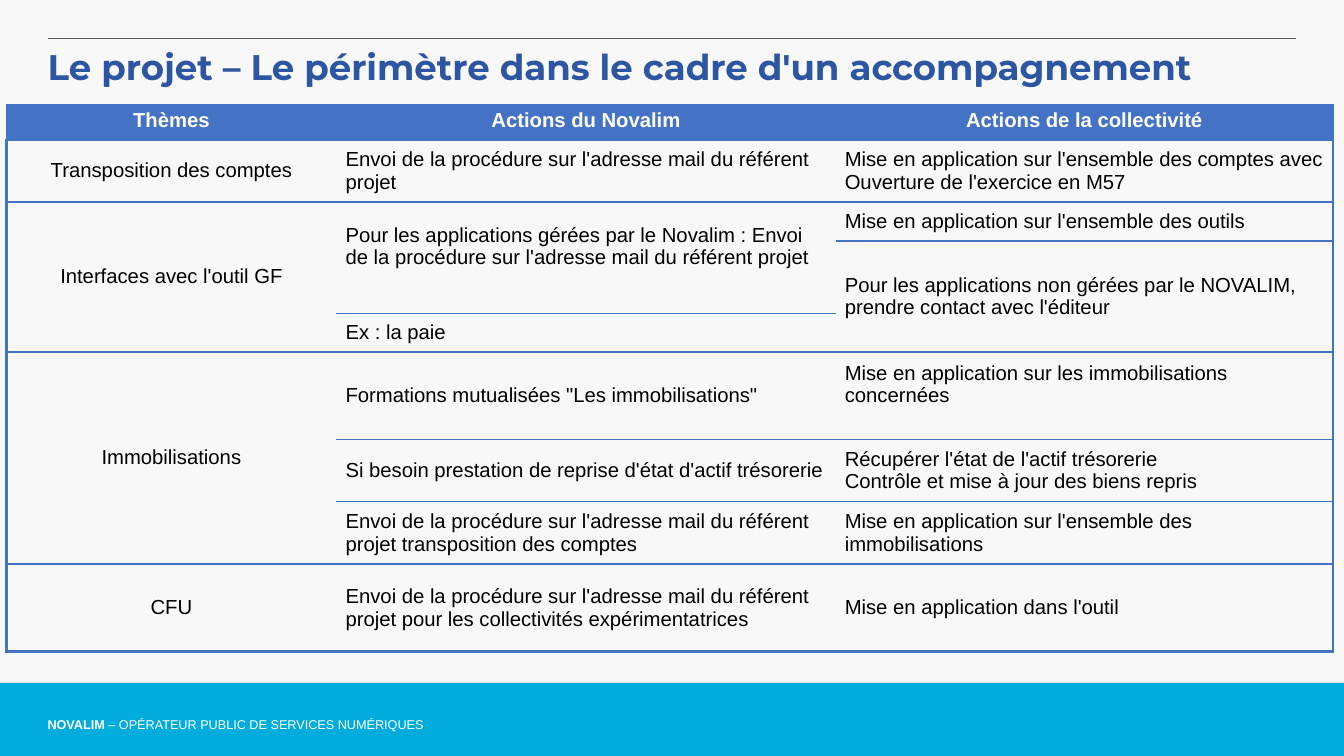
from dataclasses import dataclass
from itertools import accumulate

from lxml import etree
from pptx import Presentation
from pptx.dml.color import RGBColor
from pptx.enum.shapes import MSO_CONNECTOR, MSO_SHAPE
from pptx.enum.text import MSO_ANCHOR, PP_ALIGN
from pptx.oxml.ns import qn
from pptx.util import Inches, Pt

LEFT, CENTER = PP_ALIGN.LEFT, PP_ALIGN.CENTER
TOP, MIDDLE = MSO_ANCHOR.TOP, MSO_ANCHOR.MIDDLE
STRAIGHT = MSO_CONNECTOR.STRAIGHT
RECTANGLE = MSO_SHAPE.RECTANGLE


@dataclass(frozen=True)
class Theme:
    page: str = "F8F8F8"
    bar: str = "00ACDC"
    rule: str = "58595B"
    title: str = "2C55A2"
    grid: str = "4472C4"
    ink: str = "000000"
    white: str = "FFFFFF"
    title_font: str = "Montserrat"
    body_font: str = "Arial"
    title_size: int = 28
    body_size: int = 16
    footer_size: int = 10
    thick: float = 2.25
    medium: float = 1.5
    thin: float = 0.75


THEME = Theme()

TITLE = "Le projet – Le périmètre dans le cadre d'un accompagnement"
FOOTER = [("NOVALIM", True), (" – OPÉRATEUR PUBLIC DE SERVICES NUMÉRIQUES", False)]
HEADERS = ["Thèmes", "Actions du Novalim", "Actions de la collectivité"]

# Each entry: rows covered, paragraphs, space kept below the text
BLOCKS = [
    (THEME.thick, [
        [(1, ["Transposition des comptes"], 0)],
        [(1, ["Envoi de la procédure sur l'adresse mail du référent projet"], 0)],
        [(1, ["Mise en application sur l'ensemble des comptes avec Ouverture de l'exercice en M57"], 0)],
    ]),
    (THEME.medium, [
        [(3, ["Interfaces avec l'outil GF"], 0)],
        [(2, ["Pour les applications gérées par le Novalim : Envoi de la procédure sur l'adresse mail du référent projet"], 0.25),
         (1, ["Ex : la paie"], 0)],
        [(1, ["Mise en application sur l'ensemble des outils"], 0),
         (2, ["Pour les applications non gérées par le NOVALIM, prendre contact avec l'éditeur"], 0)],
    ]),
    (THEME.thin, [
        [(3, ["Immobilisations"], 0)],
        [(1, ["Formations mutualisées \"Les immobilisations\""], 0),
         (1, ["Si besoin prestation de reprise d'état d'actif trésorerie"], 0),
         (1, ["Envoi de la procédure sur l'adresse mail du référent projet transposition des comptes"], 0)],
        [(1, ["Mise en application sur les immobilisations concernées"], 0.25),
         (1, ["Récupérer l'état de l'actif trésorerie", "Contrôle et mise à jour des biens repris"], 0),
         (1, ["Mise en application sur l'ensemble des immobilisations"], 0)],
    ]),
    (THEME.thick, [
        [(1, ["CFU"], 0)],
        [(1, ["Envoi de la procédure sur l'adresse mail du référent projet pour les collectivités expérimentatrices"], 0)],
        [(1, ["Mise en application dans l'outil"], 0)],
    ]),
]

PAGE_WIDTH, PAGE_HEIGHT = 14.7, 8.27
MARGIN = 0.52
BAR_HEIGHT = 0.8
TABLE_LEFT, TABLE_TOP = 0.07, 1.14
COLUMNS = [3.61, 5.46, 5.44]
ROWS = [0.39, 0.68, 0.43, 0.79, 0.42, 0.96, 0.68, 0.68, 0.96]
PADDING_X, PADDING_Y = 0.1, 0.05


def color(value):
    return RGBColor.from_string(value)


def add_run(para, text, font, size, tint, bold=False):
    span = para.add_run()
    span.text = text
    span.font.name, span.font.size, span.font.bold = font, Pt(size), bold
    span.font.color.rgb = color(tint)


def set_insets(target, left, top, right, bottom):
    target.margin_left, target.margin_top = Inches(left), Inches(top)
    target.margin_right, target.margin_bottom = Inches(right), Inches(bottom)


def set_borders(cell, left, right, top, bottom):
    properties = cell._tc.get_or_add_tcPr()
    for side, width in zip("LRTB", (left, right, top, bottom)):
        line = etree.SubElement(properties, qn(f"a:ln{side}"), w=str(int(Pt(width))))
        if width:
            fill = etree.SubElement(line, qn("a:solidFill"))
            etree.SubElement(fill, qn("a:srgbClr"), val=THEME.grid)
        else:
            etree.SubElement(line, qn("a:noFill"))


def fill_cell(cell, paragraphs, align, anchor, tint, bold, space_below=0):
    set_insets(cell, PADDING_X, PADDING_Y, PADDING_X, PADDING_Y + space_below)
    cell.vertical_anchor = anchor
    for index, text in enumerate(paragraphs):
        para = cell.text_frame.add_paragraph() if index else cell.text_frame.paragraphs[0]
        para.alignment = align
        add_run(para, text, THEME.body_font, THEME.body_size, tint, bold)


def add_title(page):
    title = page.shapes.title
    title.left, title.top = Inches(MARGIN - PADDING_X), Inches(0.44)
    title.width, title.height = Inches(13.56), Inches(0.57)
    frame = title.text_frame
    frame.word_wrap, frame.vertical_anchor = True, TOP
    set_insets(frame, PADDING_X, PADDING_Y, PADDING_X, PADDING_Y)
    para = frame.paragraphs[0]
    para.alignment = LEFT
    add_run(para, TITLE, THEME.title_font, THEME.title_size, THEME.title, True)


def add_frame(page):
    bar = page.shapes.add_shape(RECTANGLE, 0, Inches(PAGE_HEIGHT - BAR_HEIGHT),
                                Inches(PAGE_WIDTH), Inches(BAR_HEIGHT))
    bar.shadow.inherit = False
    bar.fill.solid()
    bar.fill.fore_color.rgb = color(THEME.bar)
    bar.line.fill.background()
    rule = page.shapes.add_connector(STRAIGHT, Inches(MARGIN), Inches(0.42),
                                     Inches(PAGE_WIDTH - MARGIN), Inches(0.42))
    rule.line.color.rgb = color(THEME.rule)
    rule.line.width = Pt(THEME.thin)
    etree.SubElement(rule._element.spPr, qn("a:effectLst"))
    box = page.shapes.add_textbox(Inches(MARGIN), Inches(7.82), Inches(6.26), Inches(0.19))
    box.text_frame.word_wrap = True
    set_insets(box.text_frame, 0, 0, 0, 0)
    para = box.text_frame.paragraphs[0]
    para.line_spacing = 1.11
    for text, bold in FOOTER:
        add_run(para, text, THEME.body_font, THEME.footer_size, THEME.white, bold)


def add_header(table):
    last = len(HEADERS) - 1
    for column, text in enumerate(HEADERS):
        cell = table.cell(0, column)
        fill_cell(cell, [text], CENTER, TOP, THEME.white, True)
        set_borders(cell, 0 if column else THEME.thin, THEME.thin if column == last else 0,
                    THEME.thin, THEME.thick)
        cell.fill.solid()
        cell.fill.fore_color.rgb = color(THEME.grid)


def add_block(table, first, height, inner, columns):
    last = len(columns) - 1
    for column, entries in enumerate(columns):
        ends = list(accumulate(entry[0] for entry in entries))
        for (rows, paragraphs, space_below), end in zip(entries, ends):
            start = end - rows
            cell = table.cell(first + start, column)
            fill_cell(cell, paragraphs, LEFT if column else CENTER, MIDDLE,
                      THEME.ink, False, space_below)
            for row in range(start, end):
                above = inner if start else THEME.thick
                below = THEME.thick if end == height else inner
                part = table.cell(first + row, column)
                set_borders(part, 0 if column else THEME.thick,
                            THEME.thick if column == last else 0,
                            above if row == start else 0, below if row == end - 1 else 0)
                part.fill.background()
            if rows > 1:
                cell.merge(table.cell(first + end - 1, column))


def add_actions(page):
    table = page.shapes.add_table(len(ROWS), len(COLUMNS), Inches(TABLE_LEFT), Inches(TABLE_TOP),
                                  Inches(sum(COLUMNS)), Inches(sum(ROWS))).table
    table.first_row = table.horz_banding = False
    for column, width in zip(table.columns, COLUMNS):
        column.width = Inches(width)
    for row, height in zip(table.rows, ROWS):
        row.height = Inches(height)
    add_header(table)
    first = 1
    for inner, columns in BLOCKS:
        height = sum(entry[0] for entry in columns[0])
        add_block(table, first, height, inner, columns)
        first += height


def main():
    deck = Presentation()
    deck.slide_width, deck.slide_height = Inches(PAGE_WIDTH), Inches(PAGE_HEIGHT)
    page = deck.slides.add_slide(deck.slide_layouts.get_by_name("Title Only"))
    page.background.fill.solid()
    page.background.fill.fore_color.rgb = color(THEME.page)
    add_frame(page)
    add_title(page)
    add_actions(page)
    deck.save("out.pptx")


if __name__ == "__main__":
    main()
